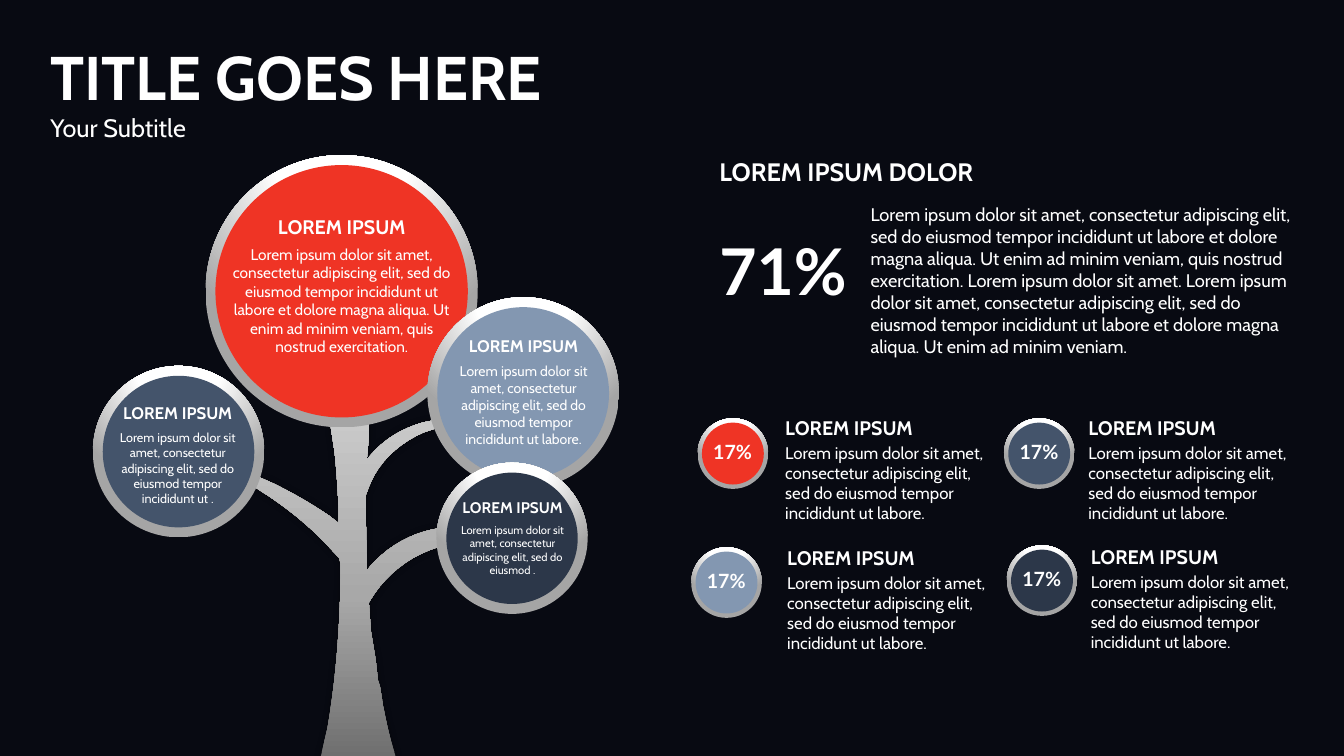
from dataclasses import dataclass

from lxml import etree
from pptx import Presentation
from pptx.dml.color import RGBColor
from pptx.enum.shapes import MSO_SHAPE
from pptx.enum.text import MSO_AUTO_SIZE, PP_ALIGN
from pptx.oxml.ns import qn
from pptx.util import Cm, Pt

OVAL, RECT = MSO_SHAPE.OVAL, MSO_SHAPE.RECTANGLE
LEFT, CENTER = PP_ALIGN.LEFT, PP_ALIGN.CENTER


@dataclass(frozen=True)
class Theme:
    # Colours
    ground: str = "222A49"
    shade: str = "000000"
    text: str = "FFFFFF"
    red: str = "EF3425"
    blue: str = "8397B1"
    slate: str = "44546B"
    navy: str = "2C3749"
    ring: tuple = ((0, "FFFFFF"), (35, "FFFFFF"), (100, "A5A5A5"))
    bark: tuple = ((0, "6F6F6F"), (48, "A8A8A8"), (100, "C9C9C9"))
    # Fonts and type sizes
    font: str = "Cabin"
    number_font: str = "Lato"
    title: int = 44
    heading: int = 18
    lead: int = 13
    figure: int = 46
    label: int = 14
    caption: int = 12


T = Theme()
LOREM = "Lorem ipsum dolor sit amet, consectetur adipiscing elit, sed do eiusmod"
SHORT = LOREM + " tempor incididunt ut labore."
LONG = (LOREM + " tempor incididunt ut labore et dolore magna aliqua. "
        "Ut enim ad minim veniam, quis nostrud exercitation.")
LEAD = (LONG + " Lorem ipsum dolor sit amet. " + LOREM + " tempor incididunt ut "
        "labore et dolore magna aliqua. Ut enim ad minim veniam.")

# Crown circles: left, top, diameter, colour; text box; sizes; text
CROWN = [
    (5.18, 3.91, 6.86, T.red, (5.49, 5.28, 6.25, 3.84), 14, 11, LONG),
    (10.77, 7.49, 4.83, T.blue, (11.05, 8.33, 4.29, 3.07), 12, 10, SHORT),
    (11, 11.66, 3.81, T.navy, (11.13, 12.42, 3.58, 2.26), 11, 8, LOREM + " ."),
    (2.34, 9.22, 4.32, T.slate, (2.69, 10.03, 3.58, 2.87), 12, 9,
     LOREM + " tempor incididunt ut ."),
]
# Badges: left, top, colour, left and top of the caption
BADGES = [
    (17.58, 10.54, T.red, 19.61, 10.39),
    (17.42, 13.79, T.blue, 19.66, 13.67),
    (25.3, 10.54, T.slate, 27.25, 10.39),
    (25.37, 13.74, T.navy, 27.31, 13.64),
]
# Tree outline in units of 2.54 cm: pairs are corners, sixes are Bézier curves
TREE = [
    (4.29, 4.17), (4.32, 4.25), (4.2, 4.29), (3.93, 4.41, 3.74, 4.61, 3.66, 4.83),
    (3.63, 4.91), (3.63, 5.13), (3.64, 5.66), (3.68, 5.61),
    (3.85, 5.42, 4.09, 5.28, 4.36, 5.24), (4.42, 5.24), (4.41, 5.28), (4.39, 5.42),
    (4.34, 5.43), (4.05, 5.52, 3.82, 5.71, 3.67, 5.96), (3.66, 5.98), (3.68, 6.26),
    (3.72, 6.5), (3.73, 6.57), (3.75, 6.75), (3.77, 6.81), (3.8, 7),
    (3.83, 7.15, 3.86, 7.29, 3.9, 7.42), (3.93, 7.52), (3.18, 7.52), (3.25, 7.22),
    (3.33, 6.76, 3.38, 6.21, 3.38, 5.61), (3.37, 5.54), (3.24, 5.4),
    (3.09, 5.24, 2.9, 5.08, 2.68, 4.93), (2.51, 4.82), (2.56, 4.73), (2.72, 4.8),
    (2.92, 4.9, 3.11, 5.01, 3.27, 5.12), (3.36, 5.19), (3.36, 5.03),
    (3.35, 4.84, 3.34, 4.66, 3.32, 4.48), (3.28, 4.22), (3.39, 4.23), (3.66, 4.2),
    (3.66, 4.33), (3.64, 4.55), (3.65, 4.55), (3.75, 4.42, 3.89, 4.31, 4.06, 4.24),
    (4.13, 4.21, 4.19, 4.19, 4.26, 4.18),
]


def add_color(parent, color, alpha=None):
    clr = etree.SubElement(parent, qn("a:srgbClr"), val=color)
    if alpha is not None:
        etree.SubElement(clr, qn("a:alpha"), val=str(alpha * 1000))


def style(sp, color):
    sp.shadow.inherit = False
    sp.fill.solid()
    sp.fill.fore_color.rgb = RGBColor.from_string(color)
    sp.line.fill.background()
    return sp


def set_gradient(sp, stops, angle=None):
    """Linear at the given angle, or circular from above when there is none."""
    solid = sp._element.spPr.find(qn("a:solidFill"))
    grad = etree.Element(qn("a:gradFill"), rotWithShape="1")
    gs_list = etree.SubElement(grad, qn("a:gsLst"))
    for pos, color in stops:
        add_color(etree.SubElement(gs_list, qn("a:gs"), pos=str(pos * 1000)), color)
    if angle is None:
        path = etree.SubElement(grad, qn("a:path"))
        path.set("path", "circle")
        etree.SubElement(path, qn("a:fillToRect"), l="50000", t="-80000",
                         r="50000", b="180000")
    else:
        etree.SubElement(grad, qn("a:lin"), ang=str(angle * 60000), scaled="0")
    solid.getparent().replace(solid, grad)


def add_shape(slide, kind, left, top, width, height, color):
    sp = slide.shapes.add_shape(kind, Cm(left), Cm(top), Cm(width), Cm(height))
    return style(sp, color)


def add_disc(slide, left, top, size, color, border):
    ring = add_shape(slide, OVAL, left, top, size, size, T.text)
    set_gradient(ring, T.ring)
    inner = size - 2 * border
    add_shape(slide, OVAL, left + border, top + border, inner, inner, color)


def add_box(slide, left, top, width, height, wrap=True, inset=(0.25, 0.13)):
    tf = slide.shapes.add_textbox(Cm(left), Cm(top), Cm(width), Cm(height)).text_frame
    tf.word_wrap = wrap
    tf.auto_size = MSO_AUTO_SIZE.SHAPE_TO_FIT_TEXT
    tf.margin_left = tf.margin_right = Cm(inset[0])
    tf.margin_top = tf.margin_bottom = Cm(inset[1])
    return tf


def add_text(tf, text, size, bold=False, font=T.font, align=LEFT, before=0, indent=0):
    p = tf.paragraphs[0]
    if p.runs:
        p = tf.add_paragraph()
        p.space_before = Pt(before)
    p.alignment = align
    if indent:
        p._p.get_or_add_pPr().set("marL", str(Cm(indent)))
    r = p.add_run()
    r.text = text
    r.font.size, r.font.bold, r.font.name = Pt(size), bold, font
    r.font.color.rgb = RGBColor.from_string(T.text)


def add_tree(slide):
    points = [TREE[0]]
    for step in TREE[1:]:
        if len(step) == 2:
            points.append(step)
            continue
        x0, y0 = points[-1]
        x1, y1, x2, y2, x3, y3 = step
        for t in (i / 10 for i in range(1, 11)):
            a, b, c, d = (1 - t) ** 3, 3 * t * (1 - t) ** 2, 3 * t * t * (1 - t), t ** 3
            points.append((a * x0 + b * x1 + c * x2 + d * x3,
                           a * y0 + b * y1 + c * y2 + d * y3))
    outline = [(x * Cm(2.54), y * Cm(2.54)) for x, y in points]
    builder = slide.shapes.build_freeform(*outline[0])
    builder.add_line_segments(outline[1:], close=True)
    sp = style(builder.convert_to_shape(), T.text)
    set_gradient(sp, T.bark, angle=270)
    effects = sp._element.spPr.find(qn("a:effectLst"))
    glow = etree.SubElement(effects, qn("a:outerShdw"), blurRad=str(Pt(5)))
    add_color(glow, T.shade, alpha=40)


def add_badge(slide, left, top, color, text_left, text_top):
    add_disc(slide, left, top, 1.78, color, 0.11)
    tf = add_box(slide, left - 0.08, top + 0.41, 1.93, 0.86)
    add_text(tf, "17%", T.label, bold=True, font=T.number_font, align=CENTER)
    tf = add_box(slide, text_left, text_top, 5.66, 2.95, inset=(0.18, 0.08))
    add_text(tf, "LOREM IPSUM", T.label, bold=True)
    add_text(tf, SHORT, T.caption, before=2.4)


def main():
    prs = Presentation()
    prs.slide_width, prs.slide_height = Cm(33.87), Cm(19.05)
    slide = prs.slides.add_slide(prs.slide_layouts[6])

    # Background
    slide.background.fill.solid()
    slide.background.fill.fore_color.rgb = RGBColor.from_string(T.ground)
    veil = add_shape(slide, RECT, 0, 0, 33.87, 19.05, T.shade)
    solid = veil._element.spPr.find(qn("a:solidFill"))
    solid.clear()
    add_color(solid, T.shade, alpha=75)

    # Title
    tf = add_box(slide, 1.02, 0.84, 16.51, 2.9)
    add_text(tf, "TITLE GOES HERE", T.title, bold=True)
    add_text(tf, "Your Subtitle", T.heading)

    # Tree with its crown
    add_tree(slide)
    for left, top, size, color, *_ in CROWN:
        add_disc(slide, left, top, size, color, 0.25)
    for *_, box, head_size, body_size, body in CROWN:
        tf = add_box(slide, *box)
        add_text(tf, "LOREM IPSUM", head_size, bold=True, align=CENTER)
        add_text(tf, body, body_size, align=CENTER, before=4.9)

    # Key figure
    tf = add_box(slide, 17.88, 3.81, 15.06, 5.89)
    add_text(tf, "LOREM IPSUM DOLOR", T.heading, bold=True)
    add_text(tf, LEAD, T.lead, before=12.2, indent=3.81)
    tf = add_box(slide, 17.88, 5.69, 3.96, 2.31, wrap=False)
    add_text(tf, "71%", T.figure, bold=True, font=T.number_font)

    # Badges
    for badge in BADGES:
        add_badge(slide, *badge)

    prs.save("out.pptx")


if __name__ == "__main__":
    main()
